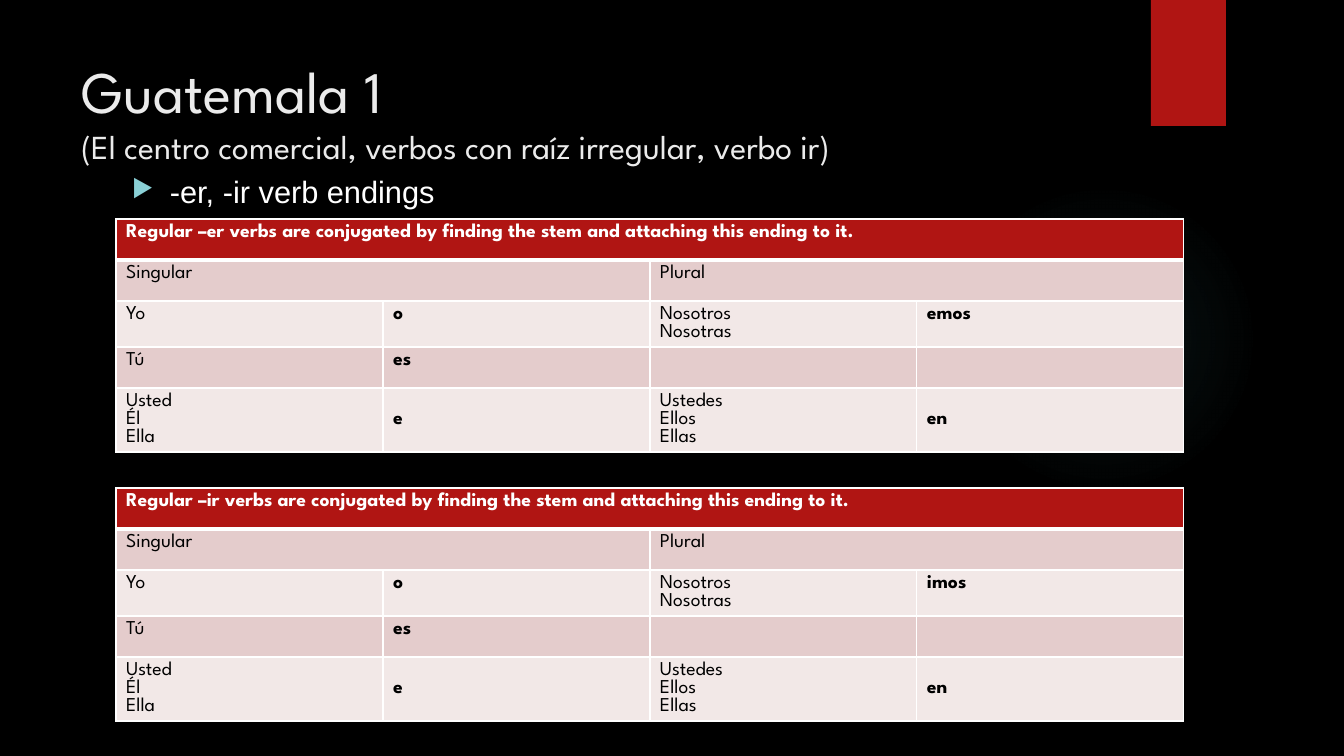
import dataclasses

import lxml.etree
import pptx
import pptx.dml.color
import pptx.enum.shapes
import pptx.enum.text
import pptx.oxml
import pptx.oxml.ns
import pptx.util

PX = 914400 / 100.8
FONT = "League Spartan"
COLORS = {
    "back": "000000",
    "red": "B01513",
    "title": "EBEBEB",
    "white": "FFFFFF",
    "black": "000000",
    "dark": "E4CCCC",
    "light": "F2E8E7",
    "bullet": "8AD0D6",
    "glow": "50B9C1",
}
NS = 'xmlns:a="http://schemas.openxmlformats.org/drawingml/2006/main"'
ROWS = (41, 41, 46, 41, 64)
COL = 267
ANCHOR = pptx.enum.text.MSO_ANCHOR


@dataclasses.dataclass(frozen=True)
class Verbs:
    """One conjugation table: its top, verb kind and nosotros ending."""
    top: int
    kind: str
    we: str


TABLES = (Verbs(219, "er", "emos"), Verbs(488, "ir", "imos"))


def px(num: float) -> int:
    return round(num * PX)


def rgb(name: str) -> pptx.dml.color.RGBColor:
    return pptx.dml.color.RGBColor.from_string(COLORS[name])


def style(para, size: int, color: str, bold: bool = False, face: str = FONT) -> None:
    for run in para.runs:
        run.font.size = pptx.util.Pt(size)
        run.font.name = face
        run.font.bold = bold
        run.font.color.rgb = rgb(color)


def add_shape(slide, kind, left: int, top: int, width: int, height: int):
    shape = slide.shapes.add_shape(kind, px(left), px(top), px(width), px(height))
    shape.shadow.inherit = False
    shape.line.fill.background()
    return shape


def add_glow(slide) -> None:
    glow = add_shape(slide, pptx.enum.shapes.MSO_SHAPE.OVAL, 949, 184, 310, 310)
    stops = "".join(
        f'<a:gs pos="{pos}000"><a:srgbClr val="{COLORS["glow"]}">'
        f'<a:alpha val="{alpha}000"/></a:srgbClr></a:gs>'
        for pos, alpha in ((0, 7), (36, 6), (69, 0))
    )
    grad = pptx.oxml.parse_xml(
        f'<a:gradFill {NS}><a:gsLst>{stops}</a:gsLst><a:path path="circle">'
        '<a:fillToRect l="50000" t="50000" r="50000" b="50000"/></a:path></a:gradFill>'
    )
    glow.element.spPr.find(pptx.oxml.ns.qn("a:prstGeom")).addnext(grad)


def add_title(slide) -> None:
    title = slide.shapes.title
    title.left, title.top, title.width, title.height = map(px, (71, 50, 1037, 154))
    frame = title.text_frame
    frame.auto_size = pptx.enum.text.MSO_AUTO_SIZE.NONE
    frame.vertical_anchor = ANCHOR.TOP
    frame.text = "Guatemala 1\n(El centro comercial, verbos con raíz irregular, verbo ir)"
    for para, size in zip(frame.paragraphs, (42, 24)):
        para.alignment = pptx.enum.text.PP_ALIGN.LEFT
        style(para, size, "title")


def add_bullet(slide) -> None:
    box = slide.shapes.add_textbox(px(122), px(167), px(986), px(485))
    frame = box.text_frame
    frame.word_wrap = True
    frame.margin_top = px(6)
    frame.text = "-er, -ir verb endings"
    para = frame.paragraphs[0]
    props = para._p.get_or_add_pPr()
    props.set("marL", str(px(38)))
    props.set("indent", str(-px(38)))
    for xml in (
        f'<a:buClr {NS}><a:srgbClr val="{COLORS["bullet"]}"/></a:buClr>',
        f'<a:buSzPct {NS} val="80000"/>',
        f'<a:buChar {NS} char="▶"/>',
    ):
        props.append(pptx.oxml.parse_xml(xml))
    style(para, 22, "white", face="Arial")


def paint(cell, fill: str, base: int) -> None:
    """Fill a cell and draw its white borders, the lower one base points wide."""
    props = cell._tc.get_or_add_tcPr()
    for side, width in (("L", 1), ("R", 1), ("T", 1), ("B", base)):
        props.append(pptx.oxml.parse_xml(
            f'<a:ln{side} {NS} w="{pptx.util.Pt(width)}"><a:solidFill>'
            f'<a:srgbClr val="{COLORS["white"]}"/></a:solidFill></a:ln{side}>'
        ))
    cell.fill.solid()
    cell.fill.fore_color.rgb = rgb(fill)


def add_table(slide, verbs: Verbs) -> None:
    head = (f"Regular –{verbs.kind} verbs are conjugated by finding the stem "
            "and attaching this ending to it.")
    texts = (
        (head, "", "", ""),
        ("Singular", "", "Plural", ""),
        ("Yo", "o", "Nosotros\nNosotras", verbs.we),
        ("Tú", "es", "", ""),
        ("Usted\nÉl\nElla", "e", "Ustedes\nEllos\nEllas", "en"),
    )
    table = slide.shapes.add_table(
        len(ROWS), 4, px(116), px(verbs.top), px(4 * COL), px(sum(ROWS))
    ).table
    table.first_row = table.horz_banding = False
    for col in table.columns:
        col.width = px(COL)
    for i, (height, line) in enumerate(zip(ROWS, texts)):
        table.rows[i].height = px(height)
        for j, text in enumerate(line):
            cell = table.cell(i, j)
            fill = "red" if i == 0 else "dark" if i % 2 else "light"
            paint(cell, fill, 1 if i else 3)
            cell.text = text
            if i == 4 and j % 2:
                cell.vertical_anchor = ANCHOR.MIDDLE
            for para in cell.text_frame.paragraphs:
                para.line_spacing = pptx.util.Pt(12.8)
                style(para, 14, "black" if i else "white", i == 0 or j % 2 == 1)
    for row, start, end in ((0, 0, 3), (1, 0, 1), (1, 2, 3)):
        table.cell(row, start).merge(table.cell(row, end))


def main() -> None:
    deck = pptx.Presentation()
    deck.slide_width, deck.slide_height = px(1344), px(756)
    slide = deck.slides.add_slide(deck.slide_layouts[5])
    slide.background.fill.solid()
    slide.background.fill.fore_color.rgb = rgb("back")
    add_glow(slide)
    tab = add_shape(slide, pptx.enum.shapes.MSO_SHAPE.RECTANGLE, 1151, 0, 75, 126)
    tab.fill.solid()
    tab.fill.fore_color.rgb = rgb("red")
    add_title(slide)
    add_bullet(slide)
    for verbs in TABLES:
        add_table(slide, verbs)
    deck.save("out.pptx")


if __name__ == "__main__":
    main()
